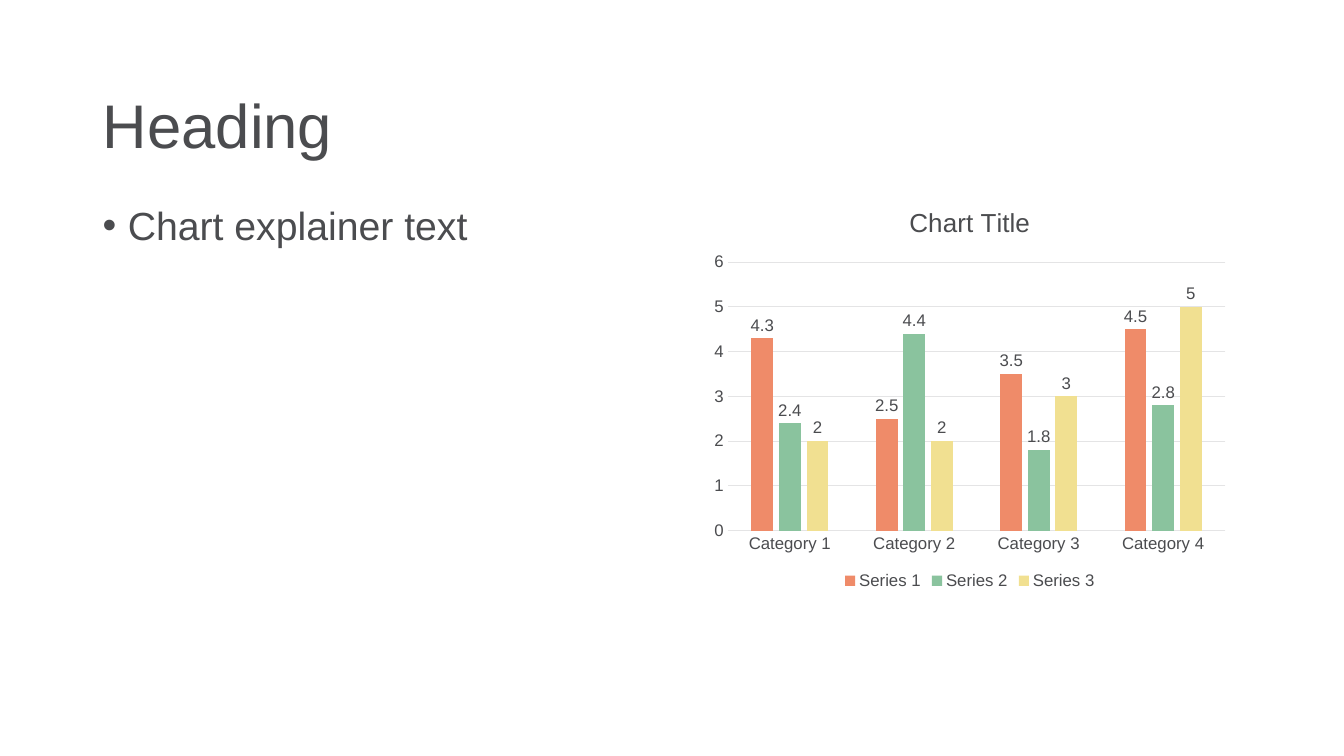
from lxml import etree
from pptx import Presentation
from pptx import util as u
from pptx.chart.data import CategoryChartData
from pptx.dml.color import RGBColor
from pptx.enum import chart as charts, text
from pptx.oxml.ns import qn

COLOURS = {
    "text": "4B4C4F",
    "grid": "E4E4E5",
    "Series 1": "EF8B69",
    "Series 2": "8AC39E",
    "Series 3": "F1E091",
}
CATEGORIES = [f"Category {number}" for number in range(1, 5)]
SERIES = {
    "Series 1": (4.3, 2.5, 3.5, 4.5),
    "Series 2": (2.4, 4.4, 1.8, 2.8),
    "Series 3": (2, 2, 3, 5),
}


class SlideBuilder:
    """Places elements by percentages of the slide's width and height."""

    font_name = "Arial"

    def __init__(self, presentation):
        self.width = presentation.slide_width
        self.height = presentation.slide_height
        self.slide = presentation.slides.add_slide(presentation.slide_layouts[5])

    def box(self, left, top, width, height):
        return (
            int(self.width * left / 100),
            int(self.height * top / 100),
            int(self.width * width / 100),
            int(self.height * height / 100),
        )

    def style(self, font, size):
        font.name = self.font_name
        font.size = u.Pt(size)
        font.bold = False
        font.color.rgb = RGBColor.from_string(COLOURS["text"])

    def title(self, wording, *area):
        shape = self.slide.shapes.title
        shape.left, shape.top, shape.width, shape.height = self.box(*area)
        frame = shape.text_frame
        frame.text = wording
        frame.vertical_anchor = text.MSO_ANCHOR.MIDDLE
        paragraph = frame.paragraphs[0]
        paragraph.alignment = text.PP_ALIGN.LEFT
        paragraph.line_spacing = 0.9
        self.style(paragraph.font, 44)

    def bullet_text(self, wording, *area):
        frame = self.slide.shapes.add_textbox(*self.box(*area)).text_frame
        frame.word_wrap = True
        paragraph = frame.paragraphs[0]
        paragraph.text = wording
        properties = paragraph._p.get_or_add_pPr()
        indent = u.Inches(0.25)
        properties.set("marL", str(indent))
        properties.set("indent", str(-indent))
        etree.SubElement(properties, qn("a:buFont"), typeface=self.font_name)
        etree.SubElement(properties, qn("a:buChar"), char="•")
        paragraph.line_spacing = 0.9
        self.style(paragraph.font, 28)

    def column_chart(self, heading, categories, series_values, *area):
        data = CategoryChartData()
        data.categories = categories
        for name, values in series_values.items():
            data.add_series(name, values)
        chart = self.slide.shapes.add_chart(
            charts.XL_CHART_TYPE.COLUMN_CLUSTERED, *self.box(*area), data
        ).chart
        self.style(chart.font, 12)

        chart.has_title = True
        chart.chart_title.include_in_layout = False
        chart.chart_title.text_frame.text = heading
        self.style(chart.chart_title.text_frame.paragraphs[0].font, 18.6)

        chart.has_legend = True
        chart.legend.position = charts.XL_LEGEND_POSITION.BOTTOM
        chart.legend.include_in_layout = False
        self.style(chart.legend.font, 12)

        self.axes(chart)
        self.columns(chart.plots[0])

    def axes(self, chart):
        for axis in (chart.category_axis, chart.value_axis):
            axis.major_tick_mark = charts.XL_TICK_MARK.NONE
            axis.minor_tick_mark = charts.XL_TICK_MARK.NONE
            self.style(axis.tick_labels.font, 12)
        value_axis = chart.value_axis
        value_axis.minimum_scale = 0
        value_axis.maximum_scale = 6
        value_axis.major_unit = 1
        value_axis.format.line.fill.background()
        for ruled in (chart.category_axis, value_axis.major_gridlines):
            ruled.format.line.width = u.Pt(0.75)
            ruled.format.line.color.rgb = RGBColor.from_string(COLOURS["grid"])

    def columns(self, plot):
        plot.gap_width = 219
        plot.overlap = -27
        plot.vary_by_categories = False
        for series in plot.series:
            series.format.fill.solid()
            series.format.fill.fore_color.rgb = RGBColor.from_string(COLOURS[series.name])
            series.invert_if_negative = False
            labels = series.data_labels
            labels.show_value = True
            labels.position = charts.XL_LABEL_POSITION.OUTSIDE_END
            self.style(labels.font, 12)


def main():
    presentation = Presentation()
    presentation.slide_width = u.Inches(13.33)
    presentation.slide_height = u.Inches(7.5)
    builder = SlideBuilder(presentation)
    builder.title("Heading", 6.9, 9.47, 86.27, 15.07)
    builder.bullet_text("Chart explainer text", 6.9, 26.67, 42.54, 57.87)
    builder.column_chart("Chart Title", CATEGORIES, SERIES, 52.36, 24.67, 39.61, 53.87)
    presentation.save("out.pptx")


if __name__ == "__main__":
    main()
